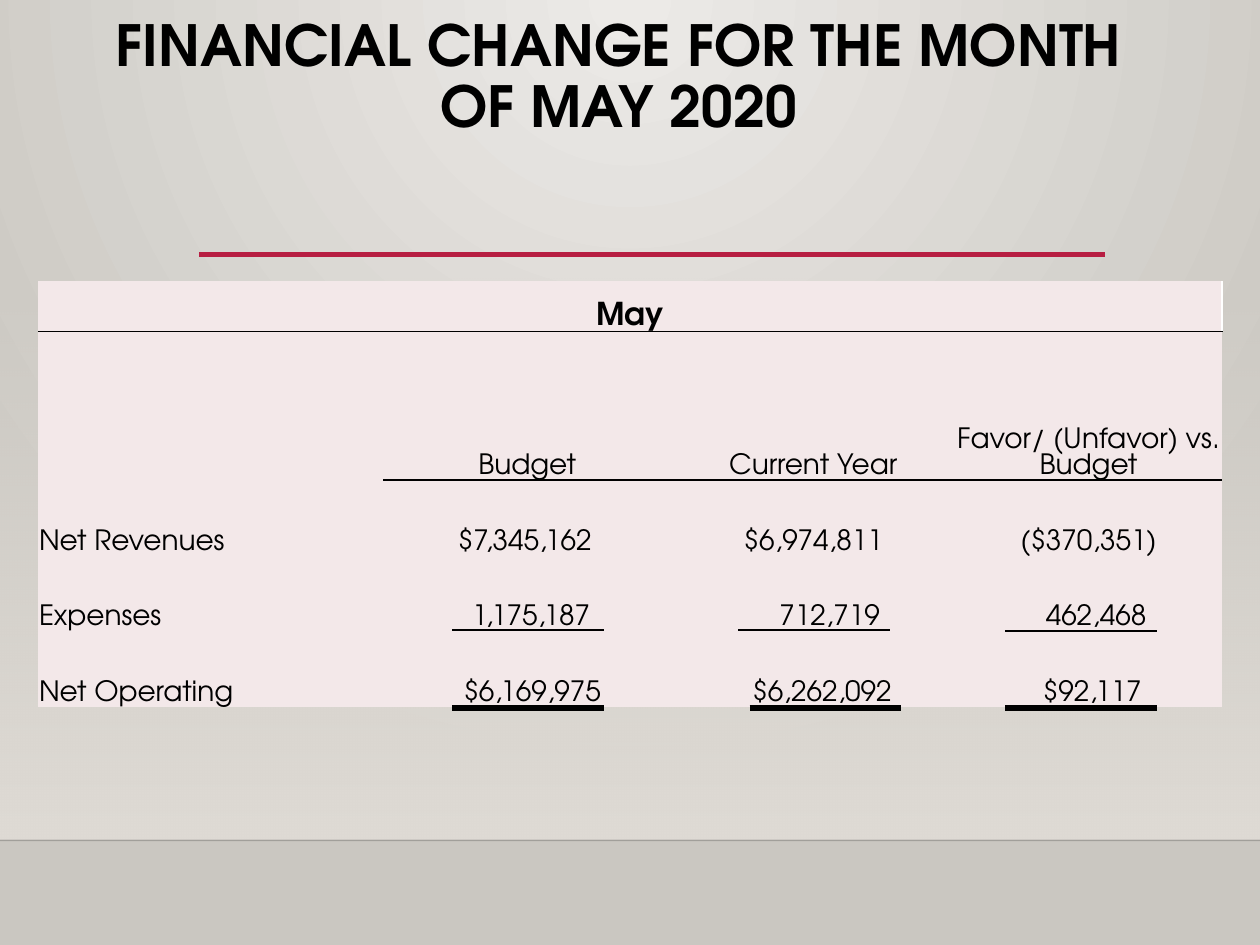
"""Build the May 2020 financial change slide."""
from lxml import etree
from pptx import Presentation
from pptx.dml.color import RGBColor
from pptx.enum.shapes import MSO_CONNECTOR, MSO_SHAPE
from pptx.enum.text import MSO_ANCHOR, PP_ALIGN
from pptx.oxml.ns import qn
from pptx.util import Inches, Pt

LINE, RECT = MSO_CONNECTOR.STRAIGHT, MSO_SHAPE.RECTANGLE
TOP, BOTTOM = MSO_ANCHOR.TOP, MSO_ANCHOR.BOTTOM
LEFT, CENTER = PP_ALIGN.LEFT, PP_ALIGN.CENTER
FONT = "TeX Gyre Adventor"
BLACK = RGBColor(0x00, 0x00, 0x00)
WHITE = RGBColor(0xFF, 0xFF, 0xFF)
RED = RGBColor(0xB7, 0x1E, 0x42)
PINK = RGBColor(0xF3, 0xE8, 0xE9)
LIGHT = RGBColor(0xEC, 0xEA, 0xE7)
GREY = RGBColor(0xCA, 0xC7, 0xC1)
SAND = RGBColor(0xDF, 0xDB, 0xD5)
NO_STYLE = "{2D5ABB26-0587-4C30-8999-92F81FD0307C}"

deck = Presentation()
deck.slide_width, deck.slide_height = Inches(10), Inches(7.5)
slide = deck.slides.add_slide(deck.slide_layouts[6])


def add_run(frame, text, size, bold, align):
    para = frame.paragraphs[0]
    para.alignment = align
    run = para.add_run()
    run.text = text
    font = run.font
    font.name, font.size, font.bold = FONT, Pt(size), bold
    font.color.rgb = BLACK
    return para


def add_line(left, right, y, width, color):
    line = slide.shapes.add_connector(
        LINE, Inches(left), Inches(y), Inches(right), Inches(y))
    line.line.color.rgb = color
    line.line.width = Pt(width)
    etree.SubElement(line._element.spPr, qn("a:effectLst"))
    return line


back = slide.background.fill
back.gradient()
for stop, color in zip(back.gradient_stops, (LIGHT, GREY)):
    stop.color.rgb = color
lin = next(slide.element.iter(qn("a:lin")))
ring = etree.Element(qn("a:path"), path="circle")
etree.SubElement(ring, qn("a:fillToRect"), l="43000", t="0", r="43000", b="100000")
lin.getparent().replace(lin, ring)

wash = slide.shapes.add_shape(RECT, 0, Inches(2.2), Inches(10), Inches(4.46))
wash.shadow.inherit = False
wash.line.fill.background()
wash.fill.gradient()
wash.fill.gradient_angle = 270
for stop in wash.fill.gradient_stops:
    stop.color.rgb = SAND
clear = next(wash._element.spPr.iter(qn("a:srgbClr")))
etree.SubElement(clear, qn("a:alpha"), val="0")

floor = add_line(0, 10, 6.67, 1, BLACK)
shade = next(floor._element.spPr.iter(qn("a:srgbClr")))
etree.SubElement(shade, qn("a:alpha"), val="20000")
add_line(1.58, 8.77, 2.02, 2.5, RED)

title = slide.shapes.add_textbox(Inches(0.81), Inches(0.09), Inches(8.2), Inches(1.13))
frame = title.text_frame
frame.word_wrap = True
frame.vertical_anchor = TOP
frame.margin_left = frame.margin_right = Inches(0.05)
para = add_run(frame, "FINANCIAL CHANGE FOR THE MONTH OF MAY 2020", 32.4, True, CENTER)
para.line_spacing = 0.9

widths = [2.74, 2.29, 2.25, 2.12]
heights = [0.4, 0.5, 0.34, 0.34, 0.6, 0.6, 0.6]
texts = {
    0: ["May"],
    1: ["", "Budget", "Current Year", "Favor/ (Unfavor) vs. Budget"],
    4: ["Net Revenues", "$7,345,162", "$6,974,811", "($370,351)"],
    5: ["Expenses", "1,175,187", "712,719", "462,468"],
    6: ["Net Operating", "$6,169,975", "$6,262,092", "$92,117"],
}
shifts = {4: [0, -0.02, 0, 0], 5: [0, 0.03, 0.13, 0.06], 6: [0, 0.04, 0.07, 0.03]}
holder = slide.shapes.add_table(
    len(heights), len(widths), Inches(0.3), Inches(2.23),
    Inches(sum(widths)), Inches(sum(heights)))
grid = holder.table
grid.first_row = grid.horz_banding = False
next(holder._element.iter(qn("a:tableStyleId"))).text = NO_STYLE
for col, width in zip(grid.columns, widths):
    col.width = Inches(width)
for row, height in zip(grid.rows, heights):
    row.height = Inches(height)
grid.cell(0, 0).merge(grid.cell(0, 3))
for c in range(1, 4):
    grid.cell(1, c).merge(grid.cell(3, c))

for r in range(len(heights)):
    for c in range(len(widths)):
        cell = grid.cell(r, c)
        cell.fill.solid()
        cell.fill.fore_color.rgb = PINK
        cell.vertical_anchor = BOTTOM
        shift = shifts.get(r, [0] * 4)[c]
        cell.margin_left = Inches(0.01 + max(0, 2 * shift))
        cell.margin_right = Inches(0.01 + max(0, -2 * shift))
        cell.margin_top, cell.margin_bottom = Inches(0.01), 0
        words = texts.get(r, [])
        if c < len(words) and words[c]:
            align = LEFT if r > 3 and c == 0 else CENTER
            add_run(cell.text_frame, words[c], 18 if r == 0 else 16, r == 0, align)
        above = r == 1 or (r == 4 and c > 0)
        below = r == 0 or (r in (1, 3) and c > 0)
        edges = {
            "a:lnL": None,
            "a:lnR": WHITE if r == 0 else None,
            "a:lnT": BLACK if above else None,
            "a:lnB": BLACK if below else None,
        }
        props = cell._tc.get_or_add_tcPr()
        for spot, (tag, color) in enumerate(edges.items()):
            edge = etree.Element(qn(tag), w=str(Pt(1)))
            if color is None:
                etree.SubElement(edge, qn("a:noFill"))
            else:
                solid = etree.SubElement(edge, qn("a:solidFill"))
                etree.SubElement(solid, qn("a:srgbClr"), val=str(color))
            props.insert(spot, edge)

for thin, thick, y in [(3.59, 3.59, 5), (5.86, 5.95, 5), (7.98, 7.98, 5.01)]:
    add_line(thick, thick + 1.2, 5.62, 3, BLACK)
    add_line(thin, thin + 1.2, y, 1.25, BLACK)

deck.save("out.pptx")
